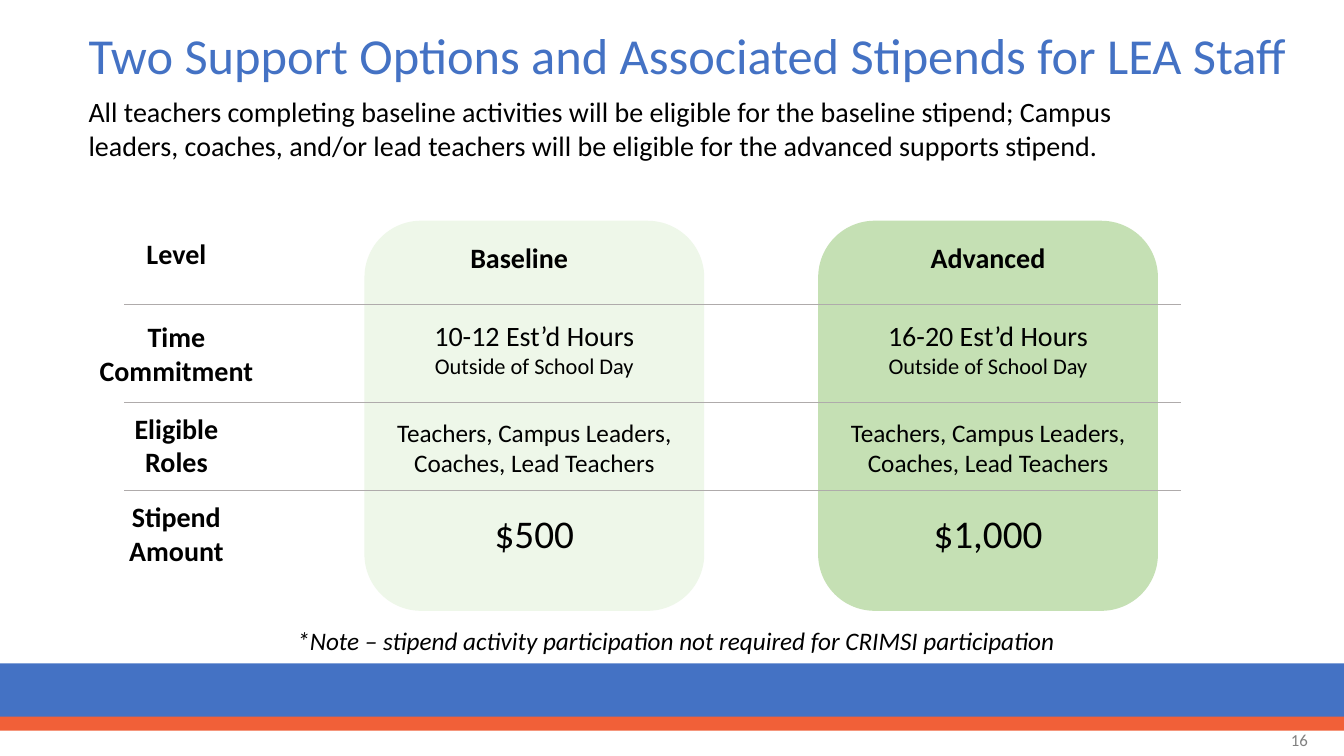
from lxml.etree import SubElement
from pptx import Presentation
from pptx.dml.color import RGBColor
from pptx.enum.shapes import MSO_CONNECTOR, MSO_SHAPE
from pptx.enum.text import MSO_ANCHOR, PP_ALIGN
from pptx.oxml.ns import qn
from pptx.util import Pt

PX = 9144  # 100 px to the inch
WIDTH, HEIGHT = 1333, 750
COLORS = {"blue": "4472C4", "orange": "F16038", "baseline": "EEF7E9",
          "advanced": "C5E0B4", "rule": "AFABAB", "gray": "808080", "black": "000000"}

TITLE = "Two Support Options and Associated Stipends for LEA Staff"
INTRO = ("All teachers completing baseline activities will be eligible for the baseline stipend; "
         "Campus leaders, coaches, and/or lead teachers will be eligible for the advanced "
         "supports stipend.")
NOTE = "*Note – stipend activity participation not required for CRIMSI participation"
PAGE = "16"

# label, top, width, height
ROW_LABELS = [("Level", 230, 176, 44), ("Time Commitment", 312, 193, 77),
              ("Eligible Roles", 403, 160, 77), ("Stipend Amount", 491, 176, 77)]
OPTIONS = [
    {"name": "Baseline", "fill": "baseline", "center": 530, "name_center": 515,
     "hours": "10-12 Est’d Hours", "stipend": "$500"},
    {"name": "Advanced", "fill": "advanced", "center": 980, "name_center": 980,
     "hours": "16-20 Est’d Hours", "stipend": "$1,000"},
]
WHEN = "Outside of School Day"
ROLES = "Teachers, Campus Leaders, Coaches, Lead Teachers"
BANDS = [(658, 58, "blue"), (711, 14, "orange")]
RULES = [302, 399, 486]
LABEL_CENTER = 175
CARD_W = 337


def rgb(name):
    return RGBColor.from_string(COLORS[name])


def box(x, y, w, h):
    return [round(v * PX) for v in (x, y, w, h)]


def add_panel(s, kind, x, y, w, h, color):
    sp = s.shapes.add_shape(kind, *box(x, y, w, h))
    sp.shadow.inherit = False
    sp.fill.solid()
    sp.fill.fore_color.rgb = rgb(color)
    sp.line.fill.background()


def add_text(s, lines, x, y, w, h, size=20, color="black", bold=False, italic=False,
             align=PP_ALIGN.LEFT, anchor=MSO_ANCHOR.TOP, spacing=None, wrap=True):
    """Add a text box; a line is a string or a (string, size) pair."""
    tf = s.shapes.add_textbox(*box(x, y, w, h)).text_frame
    tf.word_wrap = wrap
    tf.vertical_anchor = anchor
    for i, line in enumerate(lines):
        text, pt = line if isinstance(line, tuple) else (line, size)
        p = tf.paragraphs[0] if i == 0 else tf.add_paragraph()
        p.alignment = align
        p.line_spacing = spacing
        r = p.add_run()
        r.text = text
        r.font.name = "Calibri"
        r.font.size = Pt(pt)
        r.font.bold = bold
        r.font.italic = italic
        r.font.color.rgb = rgb(color)


def add_centered(s, lines, center, y, w, h, **fmt):
    add_text(s, lines, center - w / 2, y, w, h, align=PP_ALIGN.CENTER, **fmt)


def add_rule(s, y):
    x1, y1, x2, y2 = box(1171, y, 123, y)
    c = s.shapes.add_connector(MSO_CONNECTOR.STRAIGHT, x1, y1, x2, y2)
    c.line.color.rgb = rgb("rule")
    c.line.width = Pt(0.5)
    SubElement(c._element.spPr, qn("a:effectLst"))


def main():
    prs = Presentation()
    prs.slide_width, prs.slide_height = WIDTH * PX, HEIGHT * PX
    s = prs.slides.add_slide(prs.slide_layouts[6])

    for y, h, color in BANDS:
        add_panel(s, MSO_SHAPE.RECTANGLE, 0, y, WIDTH, h, color)
    for o in OPTIONS:
        add_panel(s, MSO_SHAPE.ROUNDED_RECTANGLE, o["center"] - CARD_W / 2, 219,
                  CARD_W, 387, o["fill"])
    for y in RULES:
        add_rule(s, y)

    add_text(s, [TITLE], 78, 17, 1216, 82, size=36, color="blue",
             anchor=MSO_ANCHOR.MIDDLE, spacing=0.9)
    add_text(s, [INTRO], 78, 89, 1114, 77)
    for label, y, w, h in ROW_LABELS:
        add_centered(s, [label], LABEL_CENTER, y, w, h, bold=True)
    for o in OPTIONS:
        add_centered(s, [o["name"]], o["name_center"], 234, 664, 44, bold=True)
        add_centered(s, [o["hours"], (WHEN, 16)], o["center"], 311, 667, 71)
        add_centered(s, [ROLES], o["center"], 409, 311, 71, size=18)
        add_centered(s, [o["stipend"]], o["center"], 500, 176, 57, size=28)
    add_text(s, [NOTE], 285, 615, 780, 40, size=18, italic=True, wrap=False)
    add_text(s, [PAGE], 1007, 714, 300, 40, size=12, color="gray",
             align=PP_ALIGN.RIGHT, anchor=MSO_ANCHOR.MIDDLE)

    prs.save("out.pptx")


if __name__ == "__main__":
    main()
